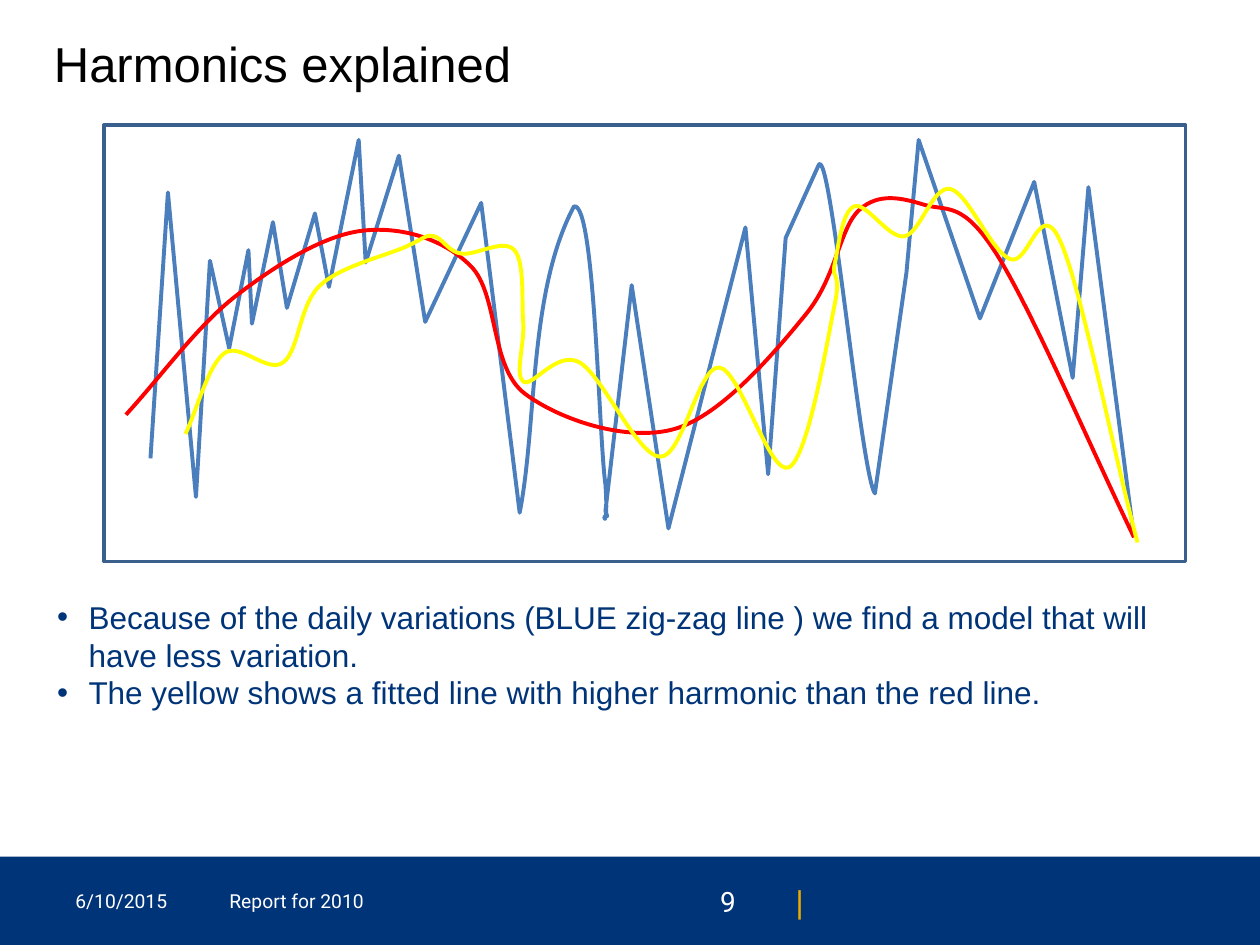
"""Build the slide that explains harmonics: zig-zag daily values and two smooth fitted curves."""
from lxml.etree import SubElement
from pptx import Presentation
from pptx.dml.color import RGBColor
from pptx.enum.shapes import MSO_SHAPE
from pptx.enum.text import MSO_ANCHOR, PP_ALIGN
from pptx.oxml.ns import qn
from pptx.util import Pt

NAVY, WHITE, BLACK, GOLD = "003478", "FFFFFF", "000000", "EAAB00"
BLUE, RED, YELLOW, FRAME_BLUE = "4B7EBC", "FF0000", "FFFF00", "3A5F8C"

SLIDE_WIDTH, SLIDE_HEIGHT = 720, 540
BAND_TOP = 489.5
FOOTER_TOP, FOOTER_HEIGHT = 500.5, 29
CHART_FRAME = (59.5, 71.5, 618, 249.5)
TITLE_BOX = (23.75, 19, 648, 65)
BULLETS_BOX = (25.5, 338, 677.5, 73)
BULLET_INDENT = 18

TITLE = "Harmonics explained"
BULLETS = [
    "Because of the daily variations (BLUE zig-zag line ) we find a model that will have less variation.",
    "The yellow shows a fitted line with higher harmonic than the red line.",
]
FOOTER = [
    {"text": "|", "left": 438.5, "width": 28, "size": 20, "hex_value": GOLD, "align": PP_ALIGN.RIGHT},
    {"text": "6/10/2015", "left": 36, "width": 76, "size": 11, "hex_value": WHITE, "align": PP_ALIGN.LEFT},
    {"text": "Report for 2010", "left": 124, "width": 228, "size": 11, "hex_value": WHITE, "align": PP_ALIGN.LEFT},
    {"text": "9", "left": 360, "width": 67.5, "size": 16, "hex_value": WHITE, "align": PP_ALIGN.RIGHT},
]

DAILY_VALUES = [
    (86, 262), (96, 110), (111.5, 284), (120, 149), (131, 199), (142, 143), (144, 185), (156, 127),
    (164, 176), (180, 122), (188, 164), (205, 80), (209, 150), (228, 89), (243, 184), (275, 116),
    (297, 293), (328, 118), (346, 277), (347, 295), (346, 292), (361, 163), (382, 302), (426, 130),
    (439, 271), (449, 136), (468, 94), (500, 282), (518, 156), (525, 80), (560, 182), (591, 104),
    (613, 216), (622, 107), (648, 307),
]
DAILY_BENDS = {
    (328, 118): [(307, 242), (302, 167)],
    (346, 277): [(340, 115), (342, 248)],
    (347, 295): [(348, 307), (343, 293)],
    (500, 282): [(475, 86), (492, 271)],
}
LOW_HARMONIC = [
    (72, 237), (135, 169), (206, 132), (269, 152), (300, 225), (386, 245),
    (461, 179), (491, 120), (528, 117), (570, 146), (648, 307),
]
HIGH_HARMONIC = [
    (106, 248), (128, 202), (162, 207), (183, 163), (232, 141), (248, 135), (264, 145), (294, 143),
    (299, 184), (299, 218), (331, 207), (377, 261), (411, 210), (451, 267), (477, 174), (477, 151),
    (488, 118), (517, 135), (543, 108), (577, 148), (606, 138), (650, 310),
]


def color(hex_value):
    return RGBColor.from_string(hex_value)


def apply(target, formats):
    for name, value in formats.items():
        setattr(target, name, value)


def mirrored(point, center):
    return tuple(2 * c - p for p, c in zip(point, center))


def shifted(anchor, before, after, share):
    return tuple(a + (end - start) * share for a, start, end in zip(anchor, before, after))


def zigzag_steps(anchors, bends):
    """Return straight steps, except where an anchor is reached by a bend."""
    return [[*bends.get(anchor, []), anchor] for anchor in anchors[1:]]


def smooth_steps(anchors):
    """Return Catmull-Rom steps: each handle follows the line between its anchor's neighbours."""
    padded = [mirrored(anchors[1], anchors[0]), *anchors, mirrored(anchors[-2], anchors[-1])]
    return [
        [shifted(start, before, end, 1 / 6), shifted(end, start, after, -1 / 6), end]
        for before, start, end, after in zip(padded, padded[1:], padded[2:], padded[3:])
    ]


def add_curve(shapes, start, steps, hex_value):
    builder = shapes.build_freeform(*start, scale=Pt(1))
    builder.add_line_segments([point for step in steps for point in step], close=False)
    curve = builder.convert_to_shape()
    segments = iter(curve._element.findall(f".//{qn('a:lnTo')}"))
    for step in steps:
        first, *rest = [next(segments) for _ in step]
        if rest:
            first.tag = qn("a:cubicBezTo")
        for segment in rest:
            first.append(segment[0])
            segment.getparent().remove(segment)
    curve.shadow.inherit = False
    curve.fill.background()
    curve.line.color.rgb = color(hex_value)
    curve.line.width = Pt(2.25)
    SubElement(curve.line._get_or_add_ln(), qn("a:round"))


def add_rectangle(shapes, box, fill=None, line=None):
    rectangle = shapes.add_shape(MSO_SHAPE.RECTANGLE, *map(Pt, box))
    rectangle.shadow.inherit = False
    for part, hex_value in ((rectangle.fill, fill), (rectangle.line.fill, line)):
        if hex_value:
            part.solid()
            part.fore_color.rgb = color(hex_value)
        else:
            part.background()
    return rectangle


def add_text(shapes, box, lines, size, font, hex_value, align=PP_ALIGN.LEFT, bullet=None, **frame_formats):
    frame = shapes.add_textbox(*map(Pt, box)).text_frame
    apply(frame, {"word_wrap": True, **frame_formats})
    frame.text = "\n".join(lines)
    for paragraph in frame.paragraphs:
        paragraph.alignment = align
        if bullet:
            properties = paragraph._p.get_or_add_pPr()
            properties.set("marL", str(Pt(BULLET_INDENT)))
            properties.set("indent", str(-Pt(BULLET_INDENT)))
            SubElement(properties, qn("a:buFont"), typeface=font)
            SubElement(properties, qn("a:buChar"), char=bullet)
        run_font = paragraph.runs[0].font
        apply(run_font, {"size": Pt(size), "name": font})
        run_font.color.rgb = color(hex_value)


def add_footer(shapes):
    add_rectangle(shapes, (0, BAND_TOP, SLIDE_WIDTH, SLIDE_HEIGHT - BAND_TOP), fill=NAVY)
    for item in FOOTER:
        box = (item["left"], FOOTER_TOP, item["width"], FOOTER_HEIGHT)
        add_text(shapes, box, [item["text"]], item["size"], "Roboto", item["hex_value"], item["align"],
                 vertical_anchor=MSO_ANCHOR.MIDDLE)


def add_harmonics(shapes):
    curves = shapes.add_group_shape().shapes
    add_curve(curves, DAILY_VALUES[0], zigzag_steps(DAILY_VALUES, DAILY_BENDS), BLUE)
    for anchors, hex_value in ((LOW_HARMONIC, RED), (HIGH_HARMONIC, YELLOW)):
        add_curve(curves, anchors[0], smooth_steps(anchors), hex_value)


def main():
    deck = Presentation()
    apply(deck, {"slide_width": Pt(SLIDE_WIDTH), "slide_height": Pt(SLIDE_HEIGHT)})
    shapes = deck.slides.add_slide(deck.slide_layouts[6]).shapes
    add_footer(shapes)
    add_text(shapes, TITLE_BOX, [TITLE], 28, "Arial", BLACK, margin_top=0)
    add_harmonics(shapes)
    add_text(shapes, BULLETS_BOX, BULLETS, 18, "Arial", NAVY, bullet="•")
    add_rectangle(shapes, CHART_FRAME, line=FRAME_BLUE).line.width = Pt(2)
    deck.save("out.pptx")


if __name__ == "__main__":
    main()
